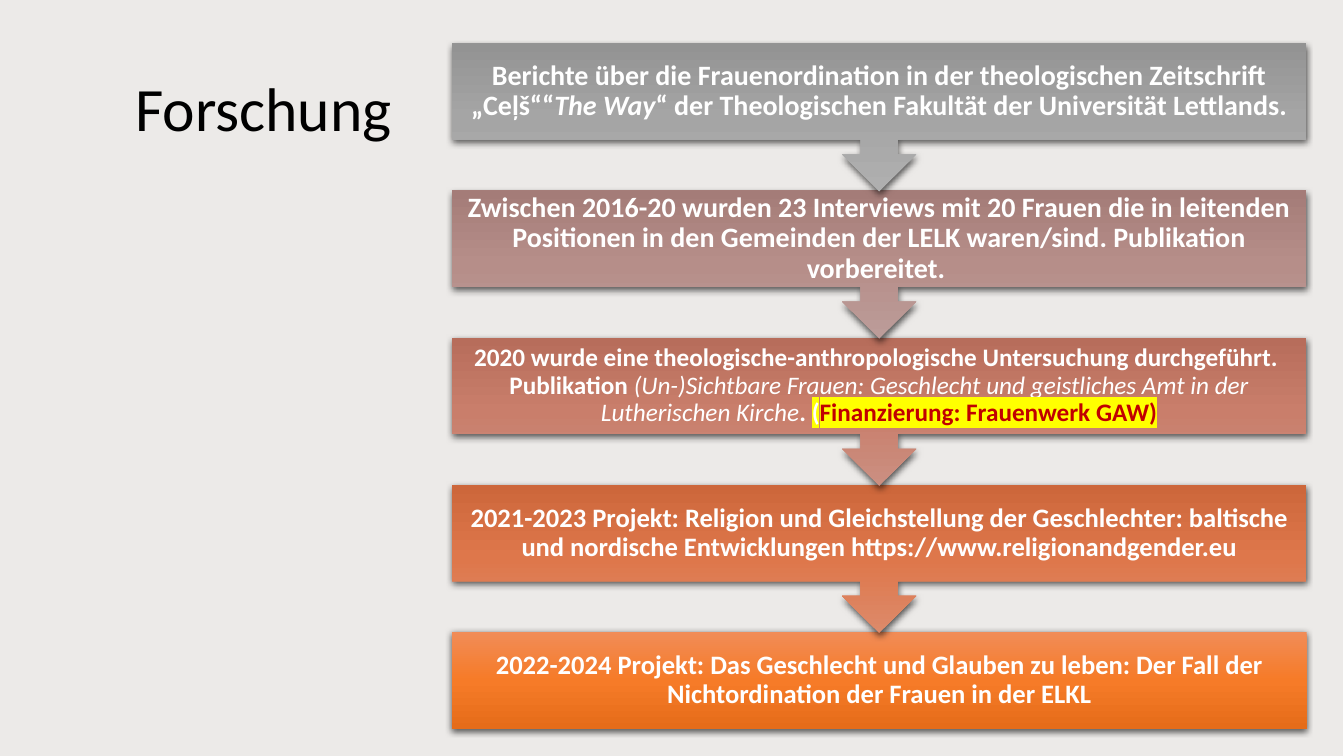
"""Build the slide "Forschung": five research steps joined by callout arrows."""
from copy import deepcopy

from lxml.etree import SubElement
from pptx import Presentation
from pptx.dml.color import RGBColor
from pptx.enum.shapes import MSO_SHAPE
from pptx.enum.text import MSO_ANCHOR, MSO_AUTO_SIZE, PP_ALIGN
from pptx.oxml.ns import qn
from pptx.util import Inches, Pt

TAUPE = RGBColor(0x82, 0x76, 0x6A)
BLACK = RGBColor(0x00, 0x00, 0x00)
WHITE = RGBColor(0xFF, 0xFF, 0xFF)
RED = RGBColor(0xC0, 0x00, 0x00)
YELLOW = RGBColor(0xFF, 0xFF, 0x00)
GRAYS = [RGBColor(0xAF, 0xAF, 0xAF), RGBColor(0xA5, 0xA5, 0xA5), RGBColor(0x93, 0x93, 0x93)]
MAUVES = [RGBColor(0xBC, 0x9C, 0x99), RGBColor(0xB6, 0x8E, 0x89), RGBColor(0xA4, 0x7C, 0x78)]
ROSES = [RGBColor(0xCB, 0x8F, 0x81), RGBColor(0xC9, 0x7E, 0x6B), RGBColor(0xB7, 0x6D, 0x5B)]
CORALS = [RGBColor(0xDD, 0x8A, 0x6A), RGBColor(0xDE, 0x77, 0x4B), RGBColor(0xCD, 0x67, 0x3B)]
ORANGES = [RGBColor(0xF1, 0x8C, 0x57), RGBColor(0xF6, 0x7B, 0x28), RGBColor(0xE5, 0x6C, 0x19)]

LEFT, TOP, WIDTH, HIGH, STEP = 4.48, 0.43, 8.48, 0.96, 1.46
BOLD = {"bold": True, "italic": False}
BOTH = {"bold": True, "italic": True}
LEAN = {"bold": False, "italic": True}

STEPS = [
    (GRAYS, 20, 0.16, [
        ("Berichte über die Frauenordination in der theologischen Zeitschrift „Ceļš““", BOLD, WHITE, None),
        ("The Way", BOTH, WHITE, None),
        ("“ der Theologischen Fakultät der Universität Lettlands.", BOLD, WHITE, None)]),
    (MAUVES, 20, 0.16, [
        ("Zwischen 2016-20 wurden 23 Interviews mit 20 Frauen die in leitenden Positionen "
         "in den Gemeinden der LELK waren/sind. Publikation vorbereitet. ", BOLD, WHITE, None)]),
    (ROSES, 18, 0.14, [
        ("2020 wurde eine theologische-anthropologische Untersuchung durchgeführt.  Publikation ",
         BOLD, WHITE, None),
        ("(Un-)Sichtbare Frauen: Geschlecht und geistliches Amt in der Lutherischen Kirche",
         LEAN, WHITE, None),
        (". ", BOLD, WHITE, None),
        ("(", BOLD, WHITE, YELLOW),
        ("Finanzierung: Frauenwerk GAW)", BOLD, RED, YELLOW)]),
    (CORALS, 19, 0.15, [
        ("2021-2023 Projekt: Religion und Gleichstellung der Geschlechter: baltische und "
         "nordische Entwicklungen https://www.religionandgender.eu", BOLD, WHITE, None)]),
    (ORANGES, 19, 0.15, [
        ("2022-2024 Projekt: Das Geschlecht und Glauben zu leben: Der Fall der "
         "Nichtordination der Frauen in der ELKL", BOLD, WHITE, None)]),
]


def style(item, values):
    for name, value in values.items():
        setattr(item, name, value)


deck = Presentation()
style(deck, {"slide_width": Inches(13.33), "slide_height": Inches(7.5)})
slide = deck.slides.add_slide(deck.slide_layouts[5])

veil = slide.shapes.add_shape(MSO_SHAPE.RECTANGLE, Inches(-0.01), 0, Inches(13.33), Inches(7.5))
veil.shadow.inherit = False
veil.line.fill.background()
veil.fill.solid()
veil.fill.fore_color.rgb = TAUPE
tint = veil.fill._xPr.find(".//" + qn("a:srgbClr"))
SubElement(tint, qn("a:alpha"), val="15000")

title = slide.shapes.title
style(title, {"left": Inches(1.24), "top": Inches(0.73),
              "width": Inches(5.12), "height": Inches(2.35)})
title.text_frame.text = "Forschung"
style(title.text_frame, {"vertical_anchor": MSO_ANCHOR.TOP, "word_wrap": True,
                         "auto_size": MSO_AUTO_SIZE.NONE})
head = title.text_frame.paragraphs[0]
style(head, {"alignment": PP_ALIGN.LEFT, "line_spacing": 0.9})
style(head.runs[0].font, {"name": "Calibri", "size": Pt(44)})
head.runs[0].font.color.rgb = BLACK
veil._element.addnext(title._element)

flow = slide.shapes.add_group_shape().shapes
last = len(STEPS) - 1
for row, (shades, size, inset, parts) in reversed(list(enumerate(STEPS))):
    top = Inches(TOP + row * STEP)
    kind = MSO_SHAPE.RECTANGLE if row == last else MSO_SHAPE.UP_ARROW_CALLOUT
    tall = HIGH if row == last else 1.47
    box = flow.add_shape(kind, Inches(LEFT), top, Inches(WIDTH), Inches(tall))
    box.rotation = 0 if row == last else 180
    box.line.fill.background()
    box.fill.gradient()
    box.fill.gradient_angle = 270
    stops = box._element.spPr.find(".//" + qn("a:gsLst"))
    stops.append(deepcopy(stops[0]))
    for stop, shade, place in zip(box.fill.gradient_stops, shades, (0, 0.5, 1)):
        stop.color.rgb = shade
        stop.position = place

    box.shadow.inherit = False
    glow = SubElement(box._element.spPr.find(qn("a:effectLst")), qn("a:outerShdw"),
                      blurRad=str(Pt(4.5)), dist=str(Pt(1.5)), dir="5400000",
                      algn="ctr", rotWithShape="0")
    dark = SubElement(glow, qn("a:srgbClr"), val=str(BLACK))
    SubElement(dark, qn("a:alpha"), val="63000")

    label = flow.add_textbox(Inches(LEFT), top, Inches(WIDTH), Inches(HIGH))
    frame = label.text_frame
    style(frame, {"word_wrap": True, "vertical_anchor": MSO_ANCHOR.MIDDLE})
    for side in ("left", "right", "top", "bottom"):
        setattr(frame, "margin_" + side, Inches(inset))
    para = frame.paragraphs[0]
    style(para, {"alignment": PP_ALIGN.CENTER, "line_spacing": 0.9})
    for text, face, color, mark in parts:
        run = para.add_run()
        run.text = text
        style(run.font, {"name": "Calibri", "size": Pt(size), **face})
        run.font.color.rgb = color
        if mark:
            props = run._r.get_or_add_rPr()
            light = SubElement(props, qn("a:highlight"))
            SubElement(light, qn("a:srgbClr"), val=str(mark))
            props.find(qn("a:solidFill")).addnext(light)

deck.save("out.pptx")
